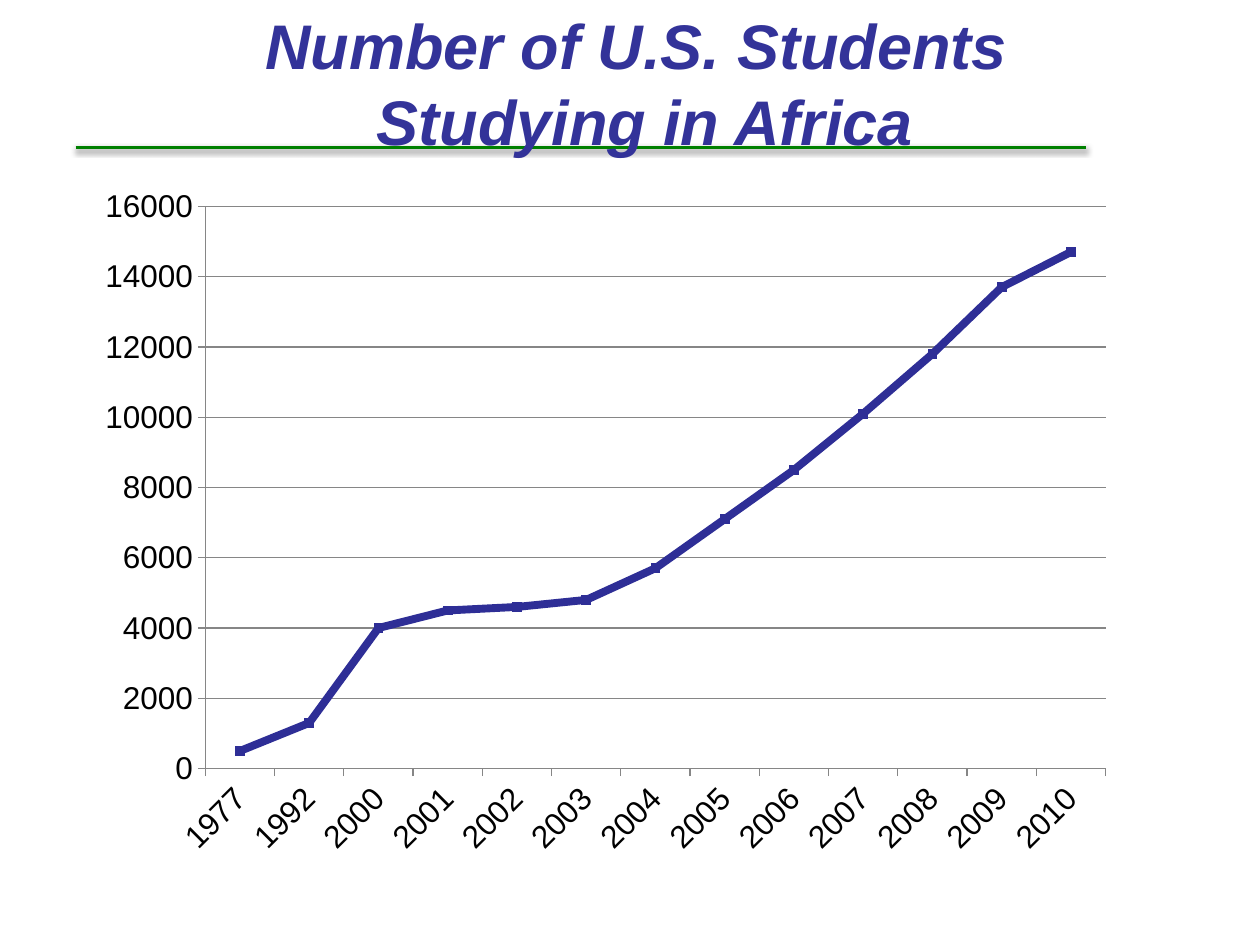
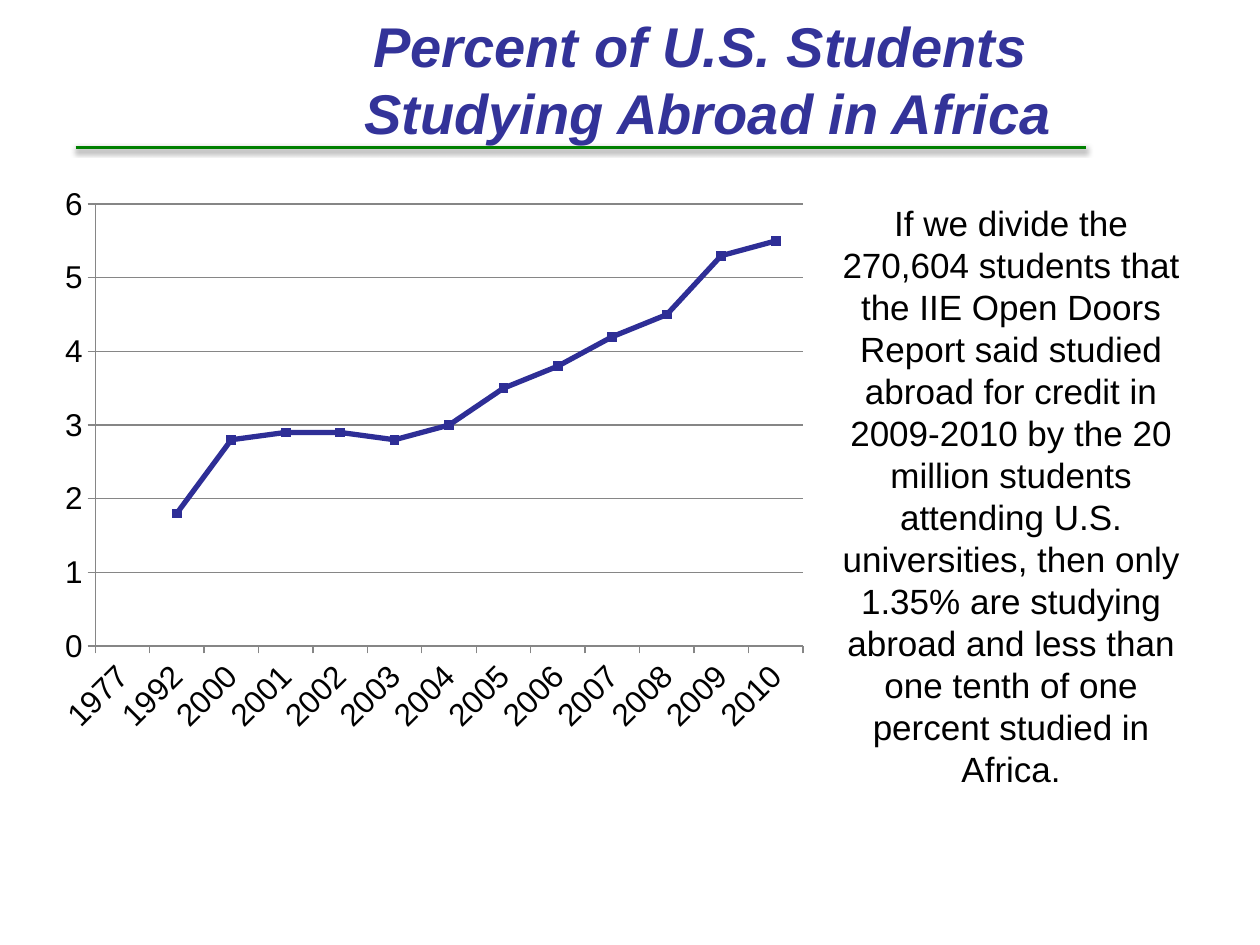
from dataclasses import dataclass
from typing import Optional

from lxml.etree import SubElement
from pptx import Presentation
from pptx.chart.data import CategoryChartData
from pptx.dml.color import RGBColor
from pptx.enum.chart import XL_CHART_TYPE, XL_MARKER_STYLE, XL_TICK_MARK
from pptx.enum.shapes import MSO_CONNECTOR
from pptx.enum.text import MSO_ANCHOR, MSO_AUTO_SIZE, PP_ALIGN
from pptx.oxml import parse_xml
from pptx.oxml.ns import nsdecls, qn
from pptx.util import Inches, Pt

COLORS = {
    "title": "333399",
    "rule": "008000",
    "series": "2E2E96",
    "grid": "868686",
    "text": "000000",
    "shadow": "000000",
}
FONT = "Arial"
COLS, ROWS = 40, 30
WIDTH, HEIGHT = Inches(10), Inches(7.5)
YEARS = ["1977", "1992", *map(str, range(2000, 2011))]


@dataclass(frozen=True)
class Box:
    col: float
    row: float
    cols: float
    rows: float

    def emu(self) -> tuple[int, int, int, int]:
        return x(self.col), y(self.row), x(self.cols), y(self.rows)


@dataclass(frozen=True)
class Label:
    text: str
    box: Box
    size: int
    color: str = "text"
    emphasis: bool = False


@dataclass(frozen=True)
class LineChart:
    box: Box
    plot: Box
    values: list[Optional[float]]
    top: float
    step: float
    weight: float


@dataclass(frozen=True)
class TrendSlide:
    title: Label
    chart: LineChart
    note: Optional[Label] = None


def x(col: float) -> int:
    return round(WIDTH * col / COLS)


def y(row: float) -> int:
    return round(HEIGHT * row / ROWS)


def rgb(name: str) -> RGBColor:
    return RGBColor.from_string(COLORS[name])


def add_rule(slide) -> None:
    line = slide.shapes.add_connector(
        MSO_CONNECTOR.STRAIGHT, x(2.4), y(4.68), x(34.48), y(4.68))
    line.line.color.rgb = rgb("rule")
    line.line.width = Pt(2)
    line._element.spPr.append(parse_xml(
        f'<a:effectLst {nsdecls("a")}>'
        f'<a:outerShdw blurRad="{Pt(3.1)}" dist="{Pt(1.6)}" dir="5400000" rotWithShape="0">'
        f'<a:srgbClr val="{COLORS["shadow"]}"><a:alpha val="38000"/></a:srgbClr>'
        '</a:outerShdw></a:effectLst>'))


def add_label(slide, label: Label) -> None:
    tf = slide.shapes.add_textbox(*label.box.emu()).text_frame
    tf.word_wrap = True
    if label.emphasis:
        tf.vertical_anchor = MSO_ANCHOR.MIDDLE
    else:
        tf.auto_size = MSO_AUTO_SIZE.SHAPE_TO_FIT_TEXT
    p = tf.paragraphs[0]
    p.text = label.text
    p.alignment = PP_ALIGN.CENTER
    for r in p.runs:
        r.font.name = FONT
        r.font.size = Pt(label.size)
        r.font.bold = r.font.italic = label.emphasis
        r.font.color.rgb = rgb(label.color)


def place_plot(chart, plot: Box) -> None:
    area = chart._chartSpace.chart.plotArea
    layout = area.find(qn("c:layout"))
    if layout is None:
        layout = area.makeelement(qn("c:layout"))
        area.insert(0, layout)
    manual = SubElement(layout, qn("c:manualLayout"))
    settings = {
        "layoutTarget": "inner", "xMode": "edge", "yMode": "edge",
        "x": plot.col, "y": plot.row, "w": plot.cols, "h": plot.rows,
    }
    for tag, value in settings.items():
        SubElement(manual, qn(f"c:{tag}")).set("val", str(value))


def add_line_chart(slide, spec_: LineChart) -> None:
    data = CategoryChartData()
    data.categories = YEARS
    data.add_series("Series 1", spec_.values)
    chart = slide.shapes.add_chart(
        XL_CHART_TYPE.LINE_MARKERS, *spec_.box.emu(), data).chart
    chart.has_title = chart.has_legend = False
    chart.font.name = FONT
    chart.font.size = Pt(18)
    chart.font.color.rgb = rgb("text")

    for axis in (chart.category_axis, chart.value_axis):
        axis.major_tick_mark = XL_TICK_MARK.OUTSIDE
        axis.format.line.color.rgb = rgb("grid")
        axis.format.line.width = Pt(0.75)
        axis.tick_labels.font.size = Pt(18)
    body = chart.category_axis._element.find(f'{qn("c:txPr")}/{qn("a:bodyPr")}')
    body.set("rot", "-2700000")
    body.set("vert", "horz")

    values = chart.value_axis
    values.minimum_scale, values.maximum_scale = 0, spec_.top
    values.major_unit = spec_.step
    values.has_major_gridlines = True
    values.major_gridlines.format.line.color.rgb = rgb("grid")
    values.major_gridlines.format.line.width = Pt(0.75)

    chart.plots[0].vary_by_categories = False
    series = chart.plots[0].series[0]
    series.smooth = False
    series.format.line.color.rgb = rgb("series")
    series.format.line.width = Pt(spec_.weight)
    series.marker.style = XL_MARKER_STYLE.SQUARE
    series.marker.size = 5
    series.marker.format.fill.solid()
    series.marker.format.fill.fore_color.rgb = rgb("series")
    series.marker.format.line.color.rgb = rgb("series")
    place_plot(chart, spec_.plot)


SLIDES = [
    TrendSlide(
        title=Label("Number of U.S. Students \vStudying in Africa",
                    Box(5.2, 0.12, 30.56, 5), 36, "title", True),
        chart=LineChart(
            Box(2.68, 5.56, 33.08, 22.04), Box(0.116, 0.045, 0.864, 0.81),
            [500, 1300, 4000, 4500, 4600, 4800, 5700,
             7100, 8500, 10100, 11800, 13700, 14700],
            top=16000, step=2000, weight=4.5),
    ),
    TrendSlide(
        title=Label("Percent of U.S. Students \vStudying Abroad in Africa",
                    Box(4.48, 0, 36, 5), 32, "title", True),
        chart=LineChart(
            Box(1.4, 5.56, 24.56, 18.08), Box(0.066, 0.051, 0.915, 0.776),
            [None, 1.8, 2.8, 2.9, 2.9, 2.8, 3, 3.5, 3.8, 4.2, 4.5, 5.3, 5.5],
            top=6, step=1, weight=3),
        note=Label(
            "If we divide the 270,604 students that the IIE Open Doors Report "
            "said studied abroad for credit in 2009-2010 by the 20 million "
            "students attending U.S. universities, then only 1.35% are studying "
            "abroad and less than one tenth of one percent studied in Africa.",
            Box(26.28, 6.2, 11.64, 19.24), 20),
    ),
]


def main() -> None:
    prs = Presentation()
    prs.slide_width, prs.slide_height = WIDTH, HEIGHT
    for content in SLIDES:
        slide = prs.slides.add_slide(prs.slide_layouts[6])
        add_rule(slide)
        add_line_chart(slide, content.chart)
        add_label(slide, content.title)
        if content.note:
            add_label(slide, content.note)
    prs.save("out.pptx")


if __name__ == "__main__":
    main()
